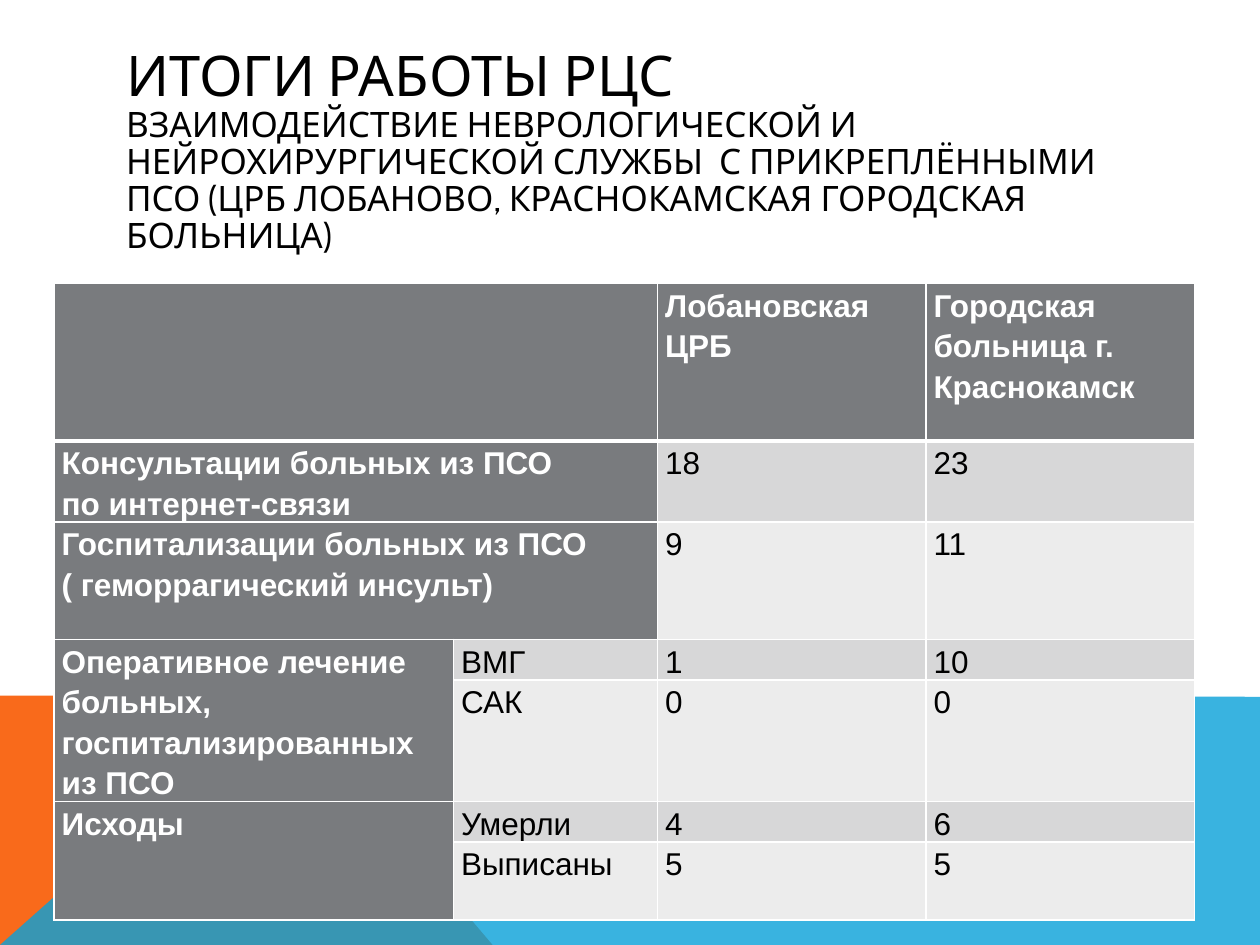
import pptx
import pptx.util
import pptx.dml.color
import pptx.enum.text
import pptx.oxml
import pptx.oxml.ns

COLOURS = {
    "orange": "F96A1B", "blue": "08A1D9", "grey": "797B7E", "white": "FFFFFF",
    "black": "000000", "band": "D7D7D8", "pale": "ECECEC",
}
COLUMNS, ROWS = 100, 75  # slide grid


def rgb(name):
    return pptx.dml.color.RGBColor.from_string(COLOURS[name])


def set_attributes(target, values):
    for name, value in values.items():
        setattr(target, name, value)


class SlideBuilder:
    cell_format = {"margin_left": pptx.util.Inches(0.06), "margin_right": pptx.util.Inches(0.06),
                   "margin_top": 0, "margin_bottom": 0}

    def __init__(self, presentation):
        self.slide = presentation.slides.add_slide(presentation.slide_layouts[5])
        self.unit_x = presentation.slide_width / COLUMNS
        self.unit_y = presentation.slide_height / ROWS

    def x(self, columns):
        return round(columns * self.unit_x)

    def y(self, rows):
        return round(rows * self.unit_y)

    def format_run(self, run, colour, **values):
        set_attributes(run.font, values)
        run.font.color.rgb = rgb(colour)

    def polygon(self, points, colour, opacity=None):
        corners = [(self.x(column), self.y(row)) for column, row in points]
        builder = self.slide.shapes.build_freeform(*corners[0])
        builder.add_line_segments(corners[1:], close=True)
        shape = builder.convert_to_shape()
        shape.shadow.inherit = False
        shape.fill.solid()
        shape.fill.fore_color.rgb = rgb(colour)
        shape.line.fill.background()
        if opacity is not None:
            fill_colour = shape.fill._xPr.find(".//" + pptx.oxml.ns.qn("a:srgbClr"))
            fill_colour.append(pptx.oxml.parse_xml(
                f'<a:alpha {pptx.oxml.ns.nsdecls("a")} val="{opacity * 1000}"/>'))

    def title(self, left, top, width, height, lines):
        shape = self.slide.shapes.title
        self.slide.shapes._spTree.append(shape._element)  # bring to front
        set_attributes(shape, {"left": self.x(left), "top": self.y(top),
                               "width": self.x(width), "height": self.y(height)})
        set_attributes(shape.text_frame, {
            "word_wrap": True, "auto_size": pptx.enum.text.MSO_AUTO_SIZE.NONE,
            "vertical_anchor": pptx.enum.text.MSO_ANCHOR.MIDDLE})
        paragraph = shape.text_frame.paragraphs[0]
        set_attributes(paragraph, {"alignment": pptx.enum.text.PP_ALIGN.LEFT,
                                   "line_spacing": 0.88})
        for index, (text, size) in enumerate(lines):
            if index:
                paragraph.add_line_break()
            run = paragraph.add_run()
            run.text = text
            self.format_run(run, "black", name="Cabin", size=pptx.util.Pt(size))

    def borders(self, cell, bottom):
        properties = cell._tc.get_or_add_tcPr()
        for side, points in (("L", 1), ("R", 1), ("T", 1), ("B", bottom)):
            properties.append(pptx.oxml.parse_xml(
                f'<a:ln{side} {pptx.oxml.ns.nsdecls("a")} w="{pptx.util.Pt(points)}">'
                f'<a:solidFill><a:srgbClr val="{COLOURS["white"]}"/></a:solidFill></a:ln{side}>'))

    def cell(self, cell, text, fill, is_label, bottom):
        set_attributes(cell, self.cell_format)
        self.borders(cell, bottom)
        cell.fill.solid()
        cell.fill.fore_color.rgb = rgb(fill)
        if not text:
            return
        cell.text = text
        for paragraph in cell.text_frame.paragraphs:
            paragraph.line_spacing = 1.15
            for run in paragraph.runs:
                self.format_run(run, "white" if is_label else "black", name="Arial",
                                size=pptx.util.Pt(18), bold=is_label)

    def table(self, left, top, widths, heights, texts, merges):
        table = self.slide.shapes.add_table(
            len(heights), len(widths), self.x(left), self.y(top),
            self.x(sum(widths)), self.y(sum(heights))).table
        set_attributes(table, {"first_row": False, "horz_banding": False})
        for column, width in zip(table.columns, widths):
            column.width = self.x(width)
        for row, height in zip(table.rows, heights):
            row.height = self.y(height)
        for first, last in merges:
            table.cell(*first).merge(table.cell(*last))
        for row, row_texts in enumerate(texts):
            for column, text in enumerate(row_texts):
                is_label = row == 0 or column == 0
                fill = "grey" if is_label else "band" if row % 2 else "pale"
                self.cell(table.cell(row, column), text, fill, is_label, 1 if row else 3)


def main():
    presentation = pptx.Presentation()
    set_attributes(presentation, {"slide_width": pptx.util.Inches(10),
                                  "slide_height": pptx.util.Inches(7.5)})
    builder = SlideBuilder(presentation)

    # Coloured band at the foot
    builder.polygon([(0, 75), (0, 55.2), (22.3, 55.2), (39.1, 75)], "orange")
    builder.polygon([(0, 75), (22.3, 55.2), (100, 55.3), (100, 75)], "blue", opacity=80)

    # Heading
    builder.title(9, 9.1, 82.3, 6, [
        ("ИТОГИ РАБОТЫ РЦС", 32),
        ("ВЗАИМОДЕЙСТВИЕ НЕВРОЛОГИЧЕСКОЙ И НЕЙРОХИРУРГИЧЕСКОЙ СЛУЖБЫ  С ПРИКРЕПЛЁННЫМИ "
         "ПСО (ЦРБ ЛОБАНОВО, КРАСНОКАМСКАЯ ГОРОДСКАЯ БОЛЬНИЦА)", 20),
    ])

    # Results by hospital
    builder.table(
        4.3, 22.5, [31.7, 16.2, 21.3, 21.3], [12.5, 6.2, 9.3, 3.2, 9.3, 3.1, 6.2],
        [
            ["", "", "Лобановская ЦРБ", "Городская больница г. Краснокамск"],
            ["Консультации больных из ПСО\nпо интернет-связи", "", "18", "23"],
            ["Госпитализации больных из ПСО ( геморрагический инсульт)", "", "9", "11"],
            ["Оперативное лечение больных, госпитализированных из ПСО", "ВМГ", "1", "10"],
            ["", "САК", "0", "0"],
            ["Исходы", "Умерли", "4", "6"],
            ["", "Выписаны", "5", "5"],
        ],
        [((row, 0), (row, 1)) for row in range(3)]
        + [((row, 0), (row + 1, 0)) for row in (3, 5)])

    presentation.save("out.pptx")


if __name__ == "__main__":
    main()
